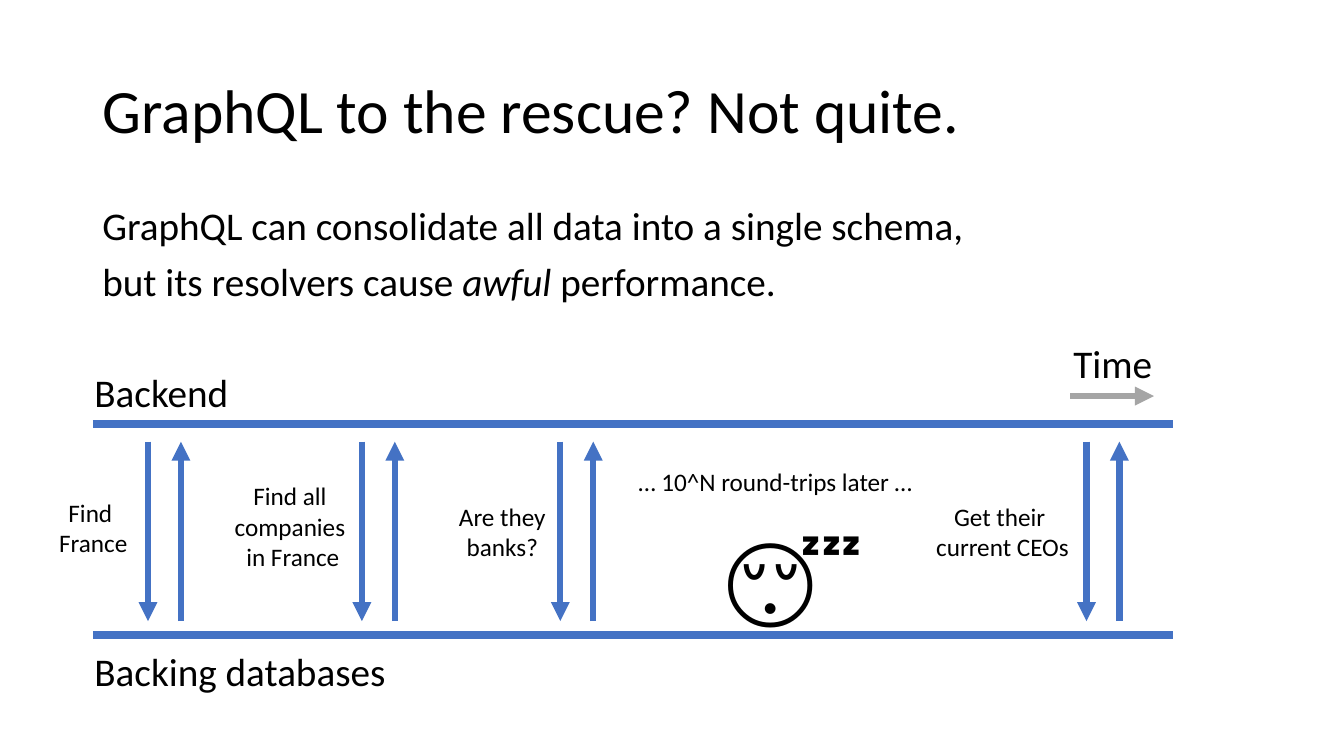
from lxml import etree
from pptx import Presentation
from pptx.dml.color import RGBColor
from pptx.enum import shapes, text
from pptx.oxml import ns
from pptx.util import Cm, Pt

BLUE, GRAY, BLACK = "4472C4", "A5A5A5", "000000"
MID, LEFT = text.PP_ALIGN.CENTER, text.PP_ALIGN.LEFT

TITLE = "GraphQL to the rescue? Not quite."
LEAD = [
    [("GraphQL can consolidate all data into a single schema, ", False)],
    [("but its resolvers cause ", False), ("awful", True), (" performance.", False)],
]
HEADS = [
    ("Backend", 2.13, 9.3, 29.21, 2.13, 0.9),
    ("Backing databases", 2.13, 16.33, 29.21, 2.13, 0.9),
    ("Time", 26.8, 8.66, 2.9, 1.32, 0.8),
]
TRIPS = [
    (3.73, ["Find ", "France"], (1.22, 12.4, 2.26, 1.8)),
    (9.12, ["Find all ", "companies ", "in France"], (5.64, 11.99, 3.48, 2.57)),
    (14.12, ["Are they", "banks?"], (11.3, 12.5, 2.72, 1.8)),
    (27.38, ["Get their ", "current CEOs"], (23.32, 12.5, 3.89, 1.8)),
]
LATER = ("… 10^N round-trips later …", (15.77, 11.63, 7.54, 1.02))
SLEEP = ("😴", (18.01, 12.83, 3.07, 3.02))
RAILS, SPAN = (10.69, 16), (2.34, 29.57)
TOP, BASE, GAP = 11.13, 15.65, 0.83


def tint(code):
    return RGBColor.from_string(code)


def fill(frame, rows, size, align=LEFT, lead=None, before=0):
    para = frame.paragraphs[0]
    para.alignment = align
    para.space_before = Pt(before)
    if lead:
        para.line_spacing = lead
    for num, row in enumerate(rows):
        if num:
            para.add_line_break()
        for words, slant in row:
            run = para.add_run()
            run.text = words
            run.font.name = "Calibri"
            run.font.size = Pt(size)
            run.font.italic = slant
            run.font.color.rgb = tint(BLACK)


def label(slide, rows, spot, size, align=LEFT, lead=None, before=0, wrap=False):
    box = slide.shapes.add_textbox(*map(Cm, spot))
    box.text_frame.word_wrap = wrap
    fill(box.text_frame, rows, size, align, lead, before)


def stroke(slide, start, end, color, width, arrow=False):
    line = slide.shapes.add_connector(
        shapes.MSO_CONNECTOR.STRAIGHT, *map(Cm, start + end))
    line.line.color.rgb = tint(color)
    line.line.width = Pt(width)
    if arrow:
        tip = etree.SubElement(line.line._get_or_add_ln(), ns.qn("a:tailEnd"))
        tip.set("type", "triangle")
    etree.SubElement(line._element.spPr, ns.qn("a:effectLst"))


def plain(*lines):
    return [[(words, False)] for words in lines]


def main():
    deck = Presentation()
    deck.slide_width, deck.slide_height = Cm(33.87), Cm(19.05)
    slide = deck.slides.add_slide(deck.slide_layouts[5])

    title = slide.shapes.title
    title.left, title.top, title.width, title.height = map(
        Cm, (2.33, 1.01, 29.21, 3.68))
    title.text_frame.vertical_anchor = text.MSO_ANCHOR.MIDDLE
    fill(title.text_frame, plain(TITLE), 44, lead=0.9)

    label(slide, LEAD, (2.33, 4.7, 29.21, 4.93), 28, lead=1.2, wrap=True)
    for y in RAILS:
        stroke(slide, (SPAN[0], y), (SPAN[1], y), BLUE, 6)
    for words, x, y, wide, high, lead in HEADS:
        label(slide, plain(words), (x, y, wide, high), 28,
              lead=lead, before=10, wrap=True)
    stroke(slide, (26.97, 9.98), (29.08, 9.98), GRAY, 4.5, True)

    for x, lines, spot in TRIPS:
        stroke(slide, (x, TOP), (x, BASE), BLUE, 4.5, True)
        stroke(slide, (x + GAP, BASE), (x + GAP, TOP), BLUE, 4.5, True)
        label(slide, plain(*lines), spot, 18, MID)
    label(slide, plain(LATER[0]), LATER[1], 18, MID)
    label(slide, plain(SLEEP[0]), SLEEP[1], 72)
    deck.save("out.pptx")


if __name__ == "__main__":
    main()
